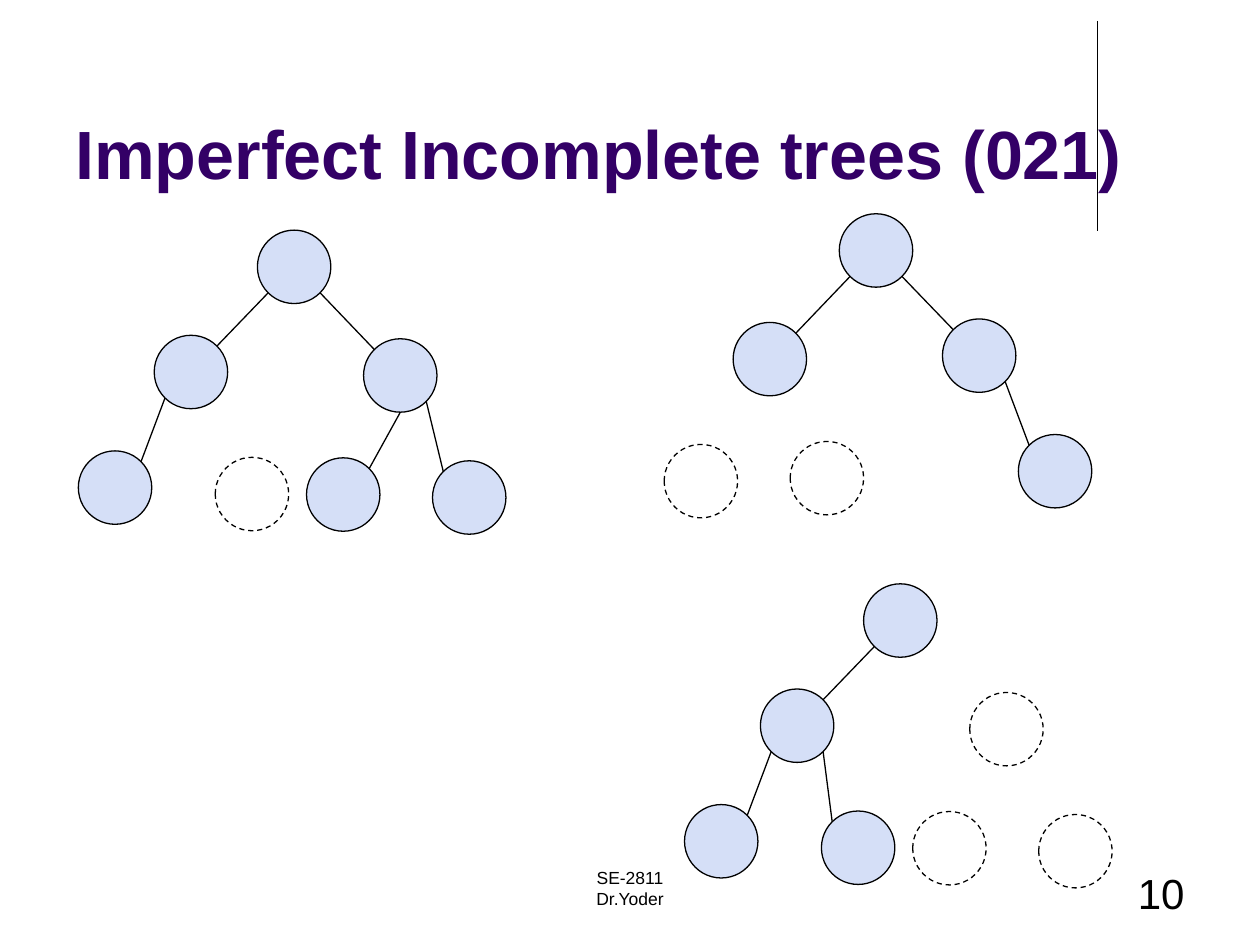
from dataclasses import dataclass

import pptx
import pptx.dml.color
import pptx.enum.dml
import pptx.enum.shapes
import pptx.enum.text
import pptx.oxml
import pptx.util
from pptx.dml.color import RGBColor
from pptx.util import Cm

BLACK = RGBColor(0x00, 0x00, 0x00)
PURPLE = RGBColor(0x33, 0x00, 0x66)
PALE = RGBColor(0xD5, 0xDF, 0xF7)

SIZE = 1.48  # node diameter, cm
DIAG = SIZE / 2 * 0.5 ** 0.5  # centre to diagonal rim point, per axis

ALIGN = pptx.enum.text.PP_ALIGN
ANCHOR = pptx.enum.text.MSO_ANCHOR


@dataclass(frozen=True)
class Node:
    """Offset from the root, and rim points of its edge as (x, y)."""
    x: float
    y: float
    start: tuple = (0, 0)  # on the parent
    end: tuple = (0, 0)  # on this node


@dataclass(frozen=True)
class Tree:
    x: float  # root centre, cm
    y: float
    full: str  # filled nodes
    gaps: str  # dashed nodes
    side: int = 1  # -1 mirrors the tree


@dataclass(frozen=True)
class Label:
    lines: tuple
    box: tuple  # left, top, width, height, cm
    size: int
    color: RGBColor
    align: ALIGN
    anchor: ANCHOR = ANCHOR.TOP
    bold: bool = False


LOW_L, LOW_R = (-DIAG, DIAG), (DIAG, DIAG)
TOP_L, TOP_R = (-DIAG, -DIAG), (DIAG, -DIAG)

# Each name is the path from the root "T"; its parent is the name less a letter
NODES = {
    "T": Node(0, 0),
    "TL": Node(-2.08, 2.12, LOW_L, TOP_R),
    "TR": Node(2.14, 2.19, LOW_R, TOP_L),
    "TLL": Node(-3.61, 4.45, LOW_L, TOP_R),
    "TLR": Node(-0.85, 4.58, LOW_R, TOP_L),
    "TRL": Node(0.99, 4.59, (0, SIZE / 2), TOP_R),
    "TRR": Node(3.53, 4.65, LOW_R, TOP_L),
}

TREES = [
    Tree(5.93, 5.38, "T TL TR TLL TRL TRR", "TLR"),
    Tree(17.66, 5.05, "T TL TR TLL", "TRL TRR", side=-1),
    Tree(18.15, 12.51, "T TL TLL TLR", "TR TRL TRR"),
]

LABELS = [
    Label(("Imperfect Incomplete trees (021)",), (1.27, 0.85, 22.86, 3.17),
          39, PURPLE, ALIGN.LEFT, ANCHOR.BOTTOM, True),
    Label(("SE-2811", "Dr.Yoder"), (8.68, 17.36, 8.04, 1.27),
          10, BLACK, ALIGN.CENTER),
    Label(("10",), (18.2, 17.36, 5.93, 1.27), 24, BLACK, ALIGN.RIGHT),
]


def pen(line) -> None:
    line.color.rgb = BLACK
    line.width = pptx.util.Pt(0.75)


def draw_line(shapes, x1: float, y1: float, x2: float, y2: float) -> None:
    link = shapes.add_connector(pptx.enum.shapes.MSO_CONNECTOR.STRAIGHT,
                                Cm(x1), Cm(y1), Cm(x2), Cm(y2))
    pen(link.line)
    props = link._element.spPr
    props.append(props.makeelement(pptx.oxml.ns.qn("a:effectLst"), {}))


def draw_node(shapes, x: float, y: float, full: bool) -> None:
    disc = shapes.add_shape(pptx.enum.shapes.MSO_SHAPE.OVAL,
                            Cm(x - SIZE / 2), Cm(y - SIZE / 2),
                            Cm(SIZE), Cm(SIZE))
    disc.shadow.inherit = False
    pen(disc.line)
    if full:
        disc.fill.solid()
        disc.fill.fore_color.rgb = PALE
    else:
        disc.fill.background()
        disc.line.dash_style = pptx.enum.dml.MSO_LINE.DASH


def draw_tree(shapes, tree: Tree) -> None:
    full = tree.full.split()
    for name in full + tree.gaps.split():
        node = NODES[name]
        draw_node(shapes, tree.x + tree.side * node.x, tree.y + node.y,
                  name in full)
    # Edges join filled nodes to their parents
    for name in full[1:]:
        node, top = NODES[name], NODES[name[:-1]]
        draw_line(shapes,
                  tree.x + tree.side * (top.x + node.start[0]),
                  tree.y + top.y + node.start[1],
                  tree.x + tree.side * (node.x + node.end[0]),
                  tree.y + node.y + node.end[1])


def draw_label(shapes, label: Label) -> None:
    frame = shapes.add_textbox(*map(Cm, label.box)).text_frame
    frame.word_wrap = True
    frame.vertical_anchor = label.anchor
    frame.text = "\n".join(label.lines)
    for para in frame.paragraphs:
        para.alignment = label.align
        for run in para.runs:
            run.font.name = "Arial"
            run.font.size = pptx.util.Pt(label.size)
            run.font.bold = label.bold
            run.font.color.rgb = label.color


def main() -> None:
    deck = pptx.Presentation()
    deck.slide_width, deck.slide_height = Cm(25.4), Cm(19.05)
    shapes = deck.slides.add_slide(deck.slide_layouts[6]).shapes

    # Rule beside the title
    draw_line(shapes, 22.12, 0.42, 22.12, 4.65)

    # Title, footer and page number
    for label in LABELS:
        draw_label(shapes, label)

    # Trees
    for tree in TREES:
        draw_tree(shapes, tree)

    deck.save("out.pptx")


if __name__ == "__main__":
    main()
